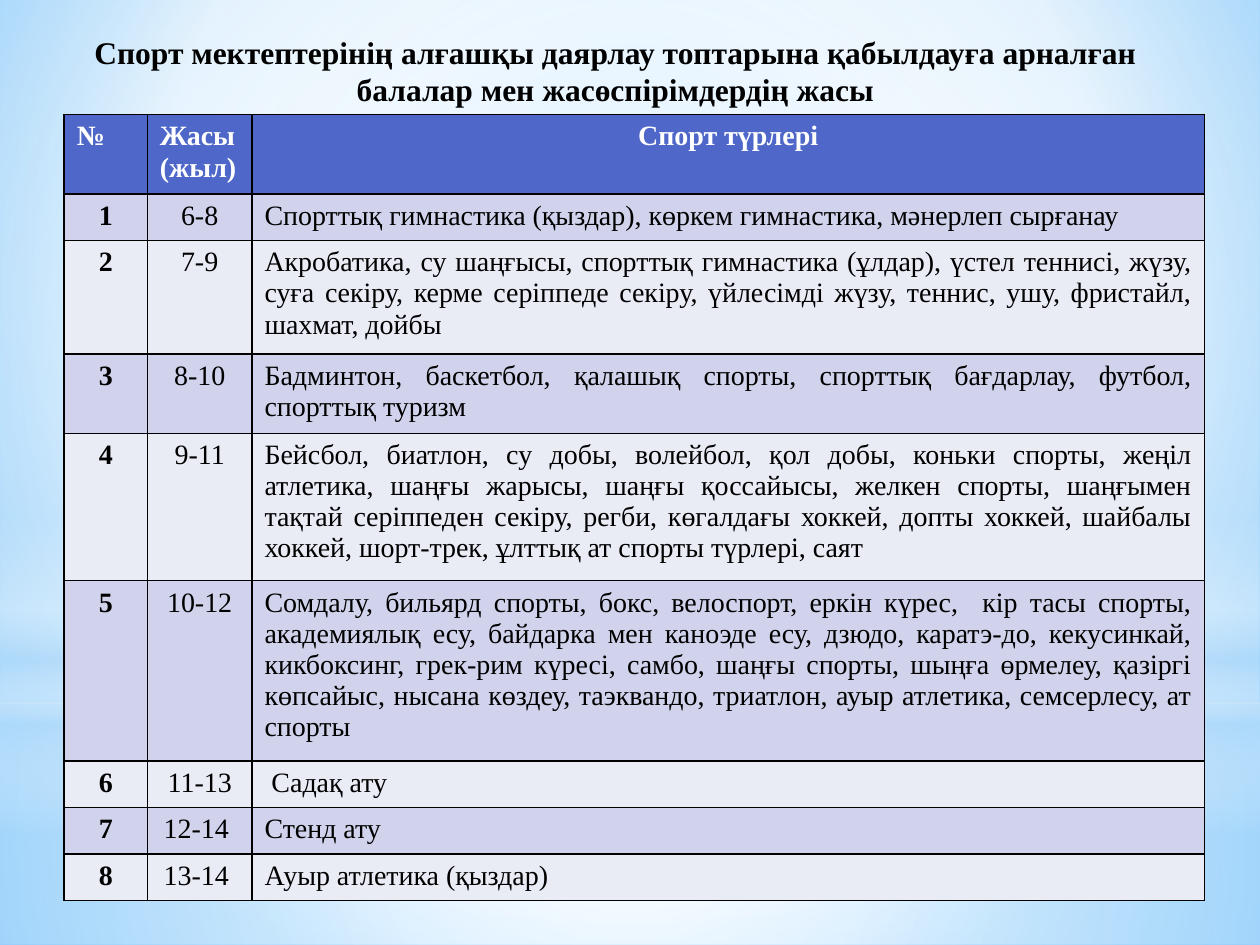
"""Build a slide with the admission ages for sport schools."""
from lxml.etree import SubElement
from pptx import Presentation
from pptx.dml.color import RGBColor
from pptx.enum.shapes import MSO_SHAPE
from pptx.enum.text import PP_ALIGN
from pptx.oxml.ns import qn
from pptx.util import Inches, Pt

FONT = "Times New Roman"
BLACK = RGBColor(0x00, 0x00, 0x00)
WHITE = RGBColor(0xFF, 0xFF, 0xFF)
BLUE = RGBColor(0x4E, 0x67, 0xC8)
LILAC = RGBColor(0xD0, 0xD3, 0xEB)
PALE = RGBColor(0xE9, 0xEB, 0xF5)
SKY = RGBColor(0xB4, 0xDC, 0xFA)
LIGHT = RGBColor(0x9E, 0xD5, 0xFF)
DEEP = RGBColor(0x5B, 0xB9, 0xFF)

MIDDLE = (50, 50, 50, 50)
TITLE = ("Спорт мектептерінің алғашқы даярлау топтарына қабылдауға арналған "
         "балалар мен жасөспірімдердің жасы")
HEADS = ("№", "Жасы (жыл)", "Спорт түрлері")
SPORTS = (
    ("6-8", "Спорттық гимнастика (қыздар), көркем гимнастика, мәнерлеп сырғанау"),
    ("7-9", "Акробатика, су шаңғысы, спорттық гимнастика (ұлдар), үстел теннисі, "
            "жүзу, суға секіру, керме серіппеде секіру, үйлесімді жүзу, теннис, ушу, "
            "фристайл, шахмат, дойбы"),
    ("8-10", "Бадминтон, баскетбол, қалашық спорты, спорттық бағдарлау, футбол, "
             "спорттық туризм"),
    ("9-11", "Бейсбол, биатлон, су добы, волейбол, қол добы, коньки спорты, жеңіл "
             "атлетика, шаңғы жарысы, шаңғы қоссайысы, желкен спорты, шаңғымен "
             "тақтай серіппеден секіру, регби, көгалдағы хоккей, допты хоккей, "
             "шайбалы хоккей, шорт-трек, ұлттық ат спорты түрлері, саят"),
    ("10-12", "Сомдалу, бильярд спорты, бокс, велоспорт, еркін күрес,  кір тасы "
              "спорты, академиялық есу, байдарка мен каноэде есу, дзюдо, каратэ-до, "
              "кекусинкай, кикбоксинг, грек-рим күресі, самбо, шаңғы спорты, шыңға "
              "өрмелеу, қазіргі көпсайыс, нысана көздеу, таэквандо, триатлон, ауыр "
              "атлетика, семсерлесу, ат спорты"),
    ("11-13", " Садақ ату"),
    ("12-14 ", "Стенд ату"),
    ("13-14 ", "Ауыр атлетика (қыздар)"),
)
WIDTHS = (0.66, 0.83, 7.56)
HEIGHTS = (0.63, 0.37, 0.9, 0.63, 1.17, 1.43, 0.37, 0.37, 0.37)


def blend(host, stops, focus=None):
    """Swap the solid fill of host for a gradient, circular if it has a focus."""
    solid = host.find(qn("a:solidFill"))
    grad = SubElement(host, qn("a:gradFill"), rotWithShape="1")
    host.replace(solid, grad)
    items = SubElement(grad, qn("a:gsLst"))
    for place, color, alpha in stops:
        stop = SubElement(items, qn("a:gs"), pos=str(place * 1000))
        tone = SubElement(stop, qn("a:srgbClr"), val=str(color))
        if alpha < 100:
            SubElement(tone, qn("a:alpha"), val=str(alpha * 1000))
    if focus:
        ring = SubElement(grad, qn("a:path"), path="circle")
        sides = {side: str(part * 1000) for side, part in zip("ltrb", focus)}
        SubElement(ring, qn("a:fillToRect"), **sides)
    else:
        SubElement(grad, qn("a:lin"), ang="5400000", scaled="0")


def glow(slide, kind, top, height, stops, focus=None):
    """Add a full-width gradient shape without an outline."""
    shape = slide.shapes.add_shape(
        kind, Inches(0), Inches(top), Inches(10), Inches(height))
    shape.shadow.inherit = False
    shape.line.fill.background()
    shape.fill.solid()
    blend(shape.fill._xPr, stops, focus)


def backdrop(slide):
    """Paint the background and its layers of light."""
    fill = slide.background.fill
    fill.solid()
    blend(fill._xPr, ((0, LIGHT, 100), (60, WHITE, 100), (100, DEEP, 100)),
          (20, 10, 20, 60))
    rect = MSO_SHAPE.RECTANGLE
    glow(slide, rect, 5.58, 1.92,
         ((0, WHITE, 91), (37, WHITE, 76), (100, SKY, 79)), MIDDLE)
    glow(slide, rect, 0, 5.58,
         ((0, WHITE, 89), (48, WHITE, 62), (100, SKY, 79)), MIDDLE)
    glow(slide, rect, 4.12, 2.5,
         ((0, WHITE, 0), (29, WHITE, 30), (45, SKY, 40),
          (55, WHITE, 26), (65, SKY, 60), (100, WHITE, 0)))
    glow(slide, MSO_SHAPE.OVAL, 1.75, 5.58,
         ((0, WHITE, 100), (56, WHITE, 0)), MIDDLE)


def write(frame, text, size=16, color=BLACK, bold=False, align=PP_ALIGN.CENTER):
    """Put formatted text into a text frame."""
    frame.word_wrap = True
    para = frame.paragraphs[0]
    para.alignment = align
    run = para.add_run()
    run.text = text
    font = run.font
    font.name, font.size, font.bold = FONT, Pt(size), bold
    font.color.rgb = color


def border(cell):
    """Draw a thin black line on every side of a cell."""
    props = cell._tc.get_or_add_tcPr()
    for spot, side in enumerate("LRTB"):
        line = SubElement(props, qn(f"a:ln{side}"), w=str(Pt(1)))
        tint = SubElement(line, qn("a:solidFill"))
        SubElement(tint, qn("a:srgbClr"), val=str(BLACK))
        props.insert(spot, line)


def grid(slide):
    """Add the table of ages and sports."""
    rows = [HEADS] + [(str(num), *row) for num, row in enumerate(SPORTS, 1)]
    table = slide.shapes.add_table(
        len(rows), len(HEADS), Inches(0.51), Inches(0.91),
        Inches(sum(WIDTHS)), Inches(sum(HEIGHTS))).table
    for col, width in zip(table.columns, WIDTHS):
        col.width = Inches(width)
    for row, height in zip(table.rows, HEIGHTS):
        row.height = Inches(height)
    left, mid, just = PP_ALIGN.LEFT, PP_ALIGN.CENTER, PP_ALIGN.JUSTIFY
    for r, row in enumerate(rows):
        head = r == 0
        fill = BLUE if head else (PALE, LILAC)[r % 2]
        aligns = (left, left, mid) if head else (mid, mid, just)
        for c, text in enumerate(row):
            cell = table.cell(r, c)
            cell.fill.solid()
            cell.fill.fore_color.rgb = fill
            border(cell)
            write(cell.text_frame, text, color=WHITE if head else BLACK,
                  bold=head or c == 0, align=aligns[c])


def title(slide):
    """Add the heading above the table."""
    box = slide.shapes.add_textbox(
        Inches(0.2), Inches(0.21), Inches(9.37), Inches(0.71))
    write(box.text_frame, TITLE, size=18, bold=True)


def main():
    """Build and save the slide."""
    deck = Presentation()
    deck.slide_width, deck.slide_height = Inches(10), Inches(7.5)
    slide = deck.slides.add_slide(deck.slide_layouts[6])
    backdrop(slide)
    grid(slide)
    title(slide)
    deck.save("out.pptx")


if __name__ == "__main__":
    main()
